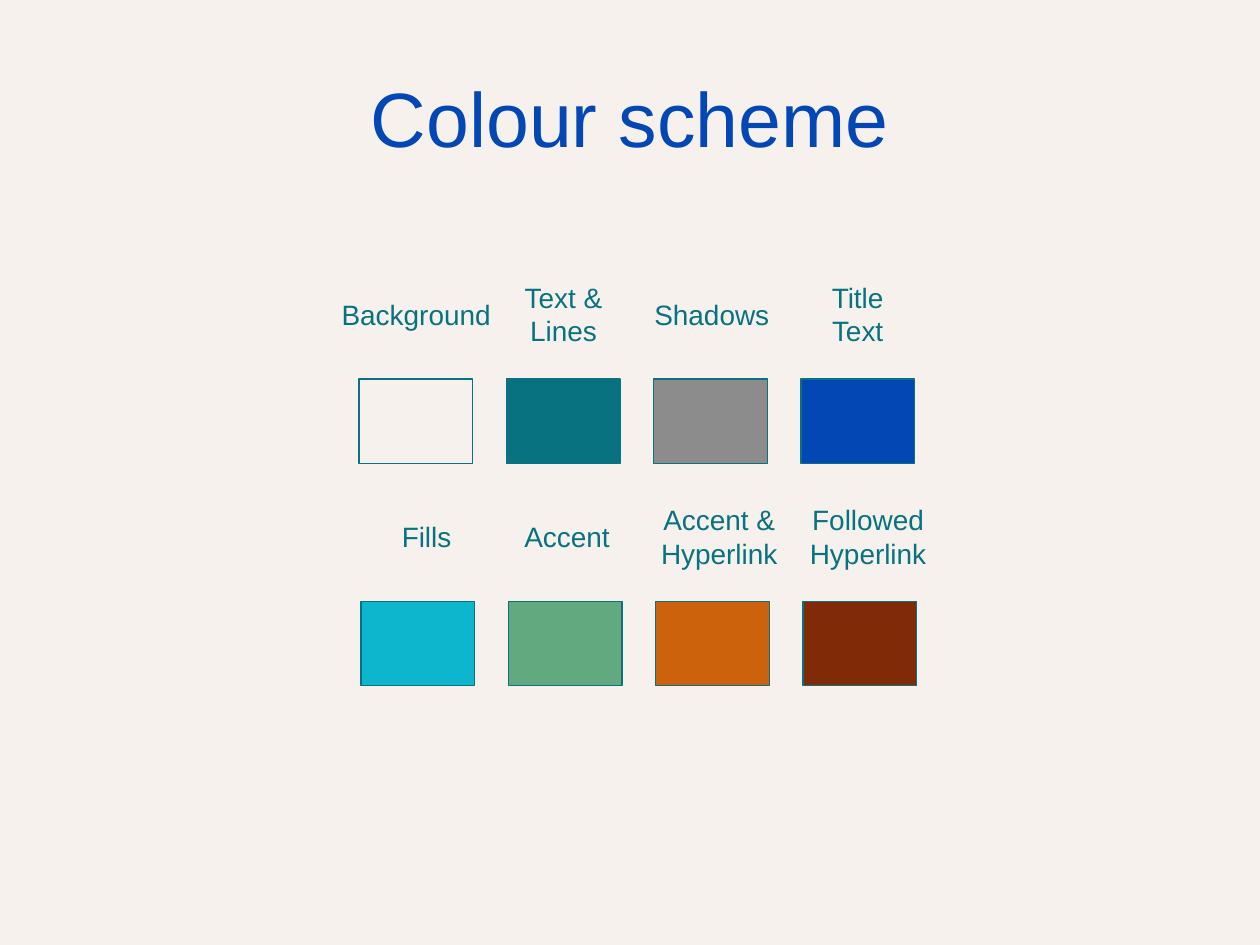
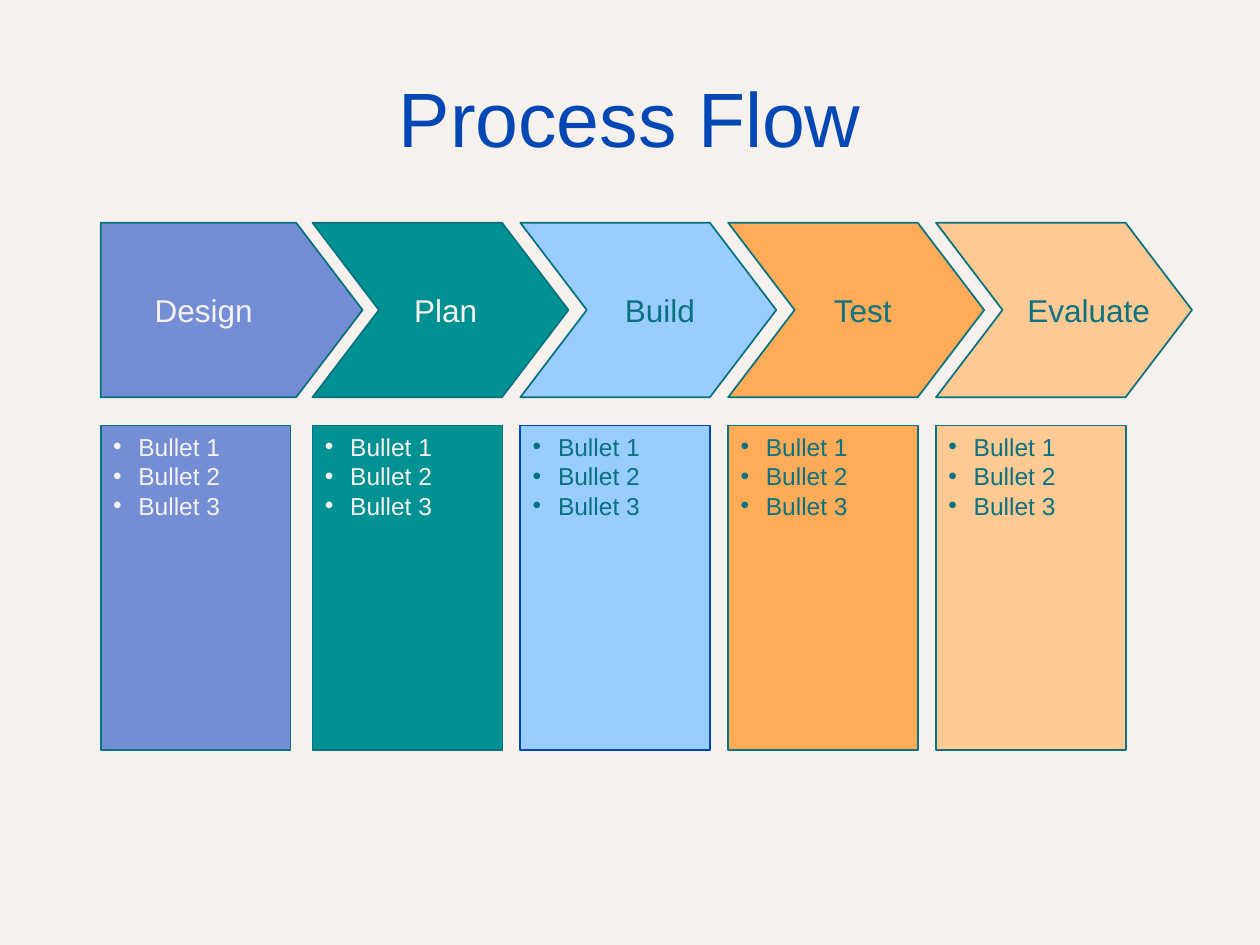
import pptx
import pptx.dml.color
import pptx.enum.shapes
import pptx.enum.text
import pptx.oxml.ns
import pptx.util
from lxml import etree

Cm = pptx.util.Cm
Pt = pptx.util.Pt
RGBColor = pptx.dml.color.RGBColor
Align = pptx.enum.text.PP_ALIGN
Anchor = pptx.enum.text.MSO_ANCHOR

CREAM = RGBColor(0xF6, 0xF1, 0xEC)
TEAL = RGBColor(0x08, 0x72, 0x80)
GREY = RGBColor(0x8C, 0x8C, 0x8C)
TITLE_BLUE = RGBColor(0x03, 0x47, 0xB5)
CYAN = RGBColor(0x0D, 0xB6, 0xCC)
GREEN = RGBColor(0x62, 0xA9, 0x7F)
RUST = RGBColor(0xCC, 0x63, 0x0C)
BROWN = RGBColor(0x80, 0x2A, 0x08)
PERIWINKLE = RGBColor(0x74, 0x8E, 0xD6)
SEA_GREEN = RGBColor(0x00, 0x91, 0x93)
SKY = RGBColor(0x99, 0xCC, 0xFF)
ORANGE = RGBColor(0xFF, 0xAB, 0x57)
PEACH = RGBColor(0xFF, 0xC9, 0x93)


class Deck:
    font_name = "Arial"

    def __init__(self):
        self.prs = pptx.Presentation()
        self.prs.slide_width = Cm(25.4)
        self.prs.slide_height = Cm(19.05)
        backdrop = self.prs.slide_master.background.fill
        backdrop.solid()
        backdrop.fore_color.rgb = CREAM
        self.slide = None

    def add_slide(self, heading):
        self.slide = self.prs.slides.add_slide(self.prs.slide_layouts[5])
        title = self.slide.shapes.title
        title.left, title.top = Cm(1.27), Cm(0.76)
        title.width, title.height = Cm(22.86), Cm(3.18)
        title.text_frame.vertical_anchor = Anchor.MIDDLE
        paragraph = title.text_frame.paragraphs[0]
        paragraph.alignment = Align.CENTER
        self.run(paragraph, heading, 44, TITLE_BLUE)

    def run(self, paragraph, text, size, color):
        run = paragraph.add_run()
        run.text = text
        run.font.name = self.font_name
        run.font.size = Pt(size)
        run.font.color.rgb = color

    def paragraphs(self, frame, count):
        return [frame.paragraphs[0]] + [frame.add_paragraph() for _ in range(count - 1)]

    def paint(self, shape, fill, line, weight):
        shape.shadow.inherit = False
        shape.fill.solid()
        shape.fill.fore_color.rgb = fill
        shape.line.color.rgb = line
        shape.line.width = Pt(weight)

    def box(self, left, top, width, height, fill, line=TEAL, weight=1.0):
        box = self.slide.shapes.add_shape(
            pptx.enum.shapes.MSO_SHAPE.RECTANGLE, Cm(left), Cm(top), Cm(width), Cm(height))
        self.paint(box, fill, line, weight)
        return box

    def bullets(self, box, items, color):
        frame = box.text_frame
        frame.word_wrap = True
        frame.vertical_anchor = Anchor.TOP
        for paragraph, item in zip(self.paragraphs(frame, len(items)), items):
            props = paragraph._p.get_or_add_pPr()
            props.set("marL", str(Cm(0.51)))
            props.set("indent", str(-Cm(0.51)))
            etree.SubElement(props, pptx.oxml.ns.qn("a:buFont")).set("typeface", self.font_name)
            etree.SubElement(props, pptx.oxml.ns.qn("a:buChar")).set("char", "•")
            paragraph.alignment = Align.LEFT
            self.run(paragraph, item, 14, color)

    def outline(self, points, fill):
        corners = [(Cm(x), Cm(y)) for x, y in points]
        builder = self.slide.shapes.build_freeform(*corners[0])
        builder.add_line_segments(corners[1:], close=True)
        self.paint(builder.convert_to_shape(), fill, TEAL, 1)

    def label(self, left, top, width, height, lines, size, color, align, soft_break=False):
        label = self.slide.shapes.add_textbox(Cm(left), Cm(top), Cm(width), Cm(height))
        frame = label.text_frame
        frame.word_wrap = False
        frame.auto_size = pptx.enum.text.MSO_AUTO_SIZE.SHAPE_TO_FIT_TEXT
        paragraphs = self.paragraphs(frame, 1 if soft_break else len(lines))
        for index, line in enumerate(lines):
            paragraph = paragraphs[0 if soft_break else index]
            paragraph.alignment = align
            if soft_break and index:
                paragraph.add_line_break()
            self.run(paragraph, line, size, color)


def colour_scheme(deck):
    deck.add_slide("Colour scheme")
    swatch_rows = [
        (7.24, 7.64, 6.34, [
            (["Background"], CREAM, 8.39, 3.53),
            (["Text &", "Lines"], TEAL, 11.36, 2.15),
            (["Shadows"], GREY, 14.35, 2.84),
            (["Title", "Text"], TITLE_BLUE, 17.29, 1.6),
        ]),
        (7.28, 12.12, 10.82, [
            (["Fills"], CYAN, 8.6, 1.55),
            (["Accent"], GREEN, 11.43, 2.25),
            (["Accent &", "Hyperlink"], RUST, 14.5, 2.9),
            (["Followed", "Hyperlink"], BROWN, 17.5, 2.9),
        ]),
    ]
    pitch = 2.97
    for row_left, swatch_top, label_middle, swatches in swatch_rows:
        for column, (role, color, center, width) in enumerate(swatches):
            deck.box(row_left + column * pitch, swatch_top, 2.29, 1.7, color, weight=0.75)
            height = 0.25 + 0.69 * len(role)
            deck.label(center - width / 2, label_middle - height / 2, width, height,
                       role, 16, TEAL, Align.CENTER, soft_break=role == ["Title", "Text"])


def process_flow(deck):
    deck.add_slide("Process Flow")
    phases = [
        ("Design", 2.03, PERIWINKLE, CREAM, TEAL, 2.87, 2.6),
        ("Plan", 6.3, SEA_GREEN, CREAM, TEAL, 8.1, 1.9),
        ("Build", 10.49, SKY, TEAL, TITLE_BLUE, 12.35, 2.05),
        ("Test", 14.68, ORANGE, TEAL, TEAL, 16.56, 1.85),
        ("Evaluate", 18.87, PEACH, TEAL, TEAL, 20.46, 3.2),
    ]
    top, middle, bottom = 4.49, 6.25, 8.01
    tip = 1.34
    tasks = [f"Bullet {number}" for number in range(1, 4)]
    for order, (phase, left, fill, ink, border, name_left, name_width) in enumerate(phases):
        deck.bullets(deck.box(left, 8.58, 3.83, 6.54, fill, border), tasks, ink)
        shoulder = left + (3.82 if order else 3.94)
        arrow = [(left, top), (shoulder, top), (shoulder + tip, middle),
                 (shoulder, bottom), (left, bottom)]
        if order:
            arrow.append((left + tip, middle))
        deck.outline(arrow, fill)
        deck.label(name_left, 5.74, name_width, 1.02, [phase], 18, ink, Align.LEFT)


def main():
    deck = Deck()
    colour_scheme(deck)
    process_flow(deck)
    deck.prs.save("out.pptx")


if __name__ == "__main__":
    main()
